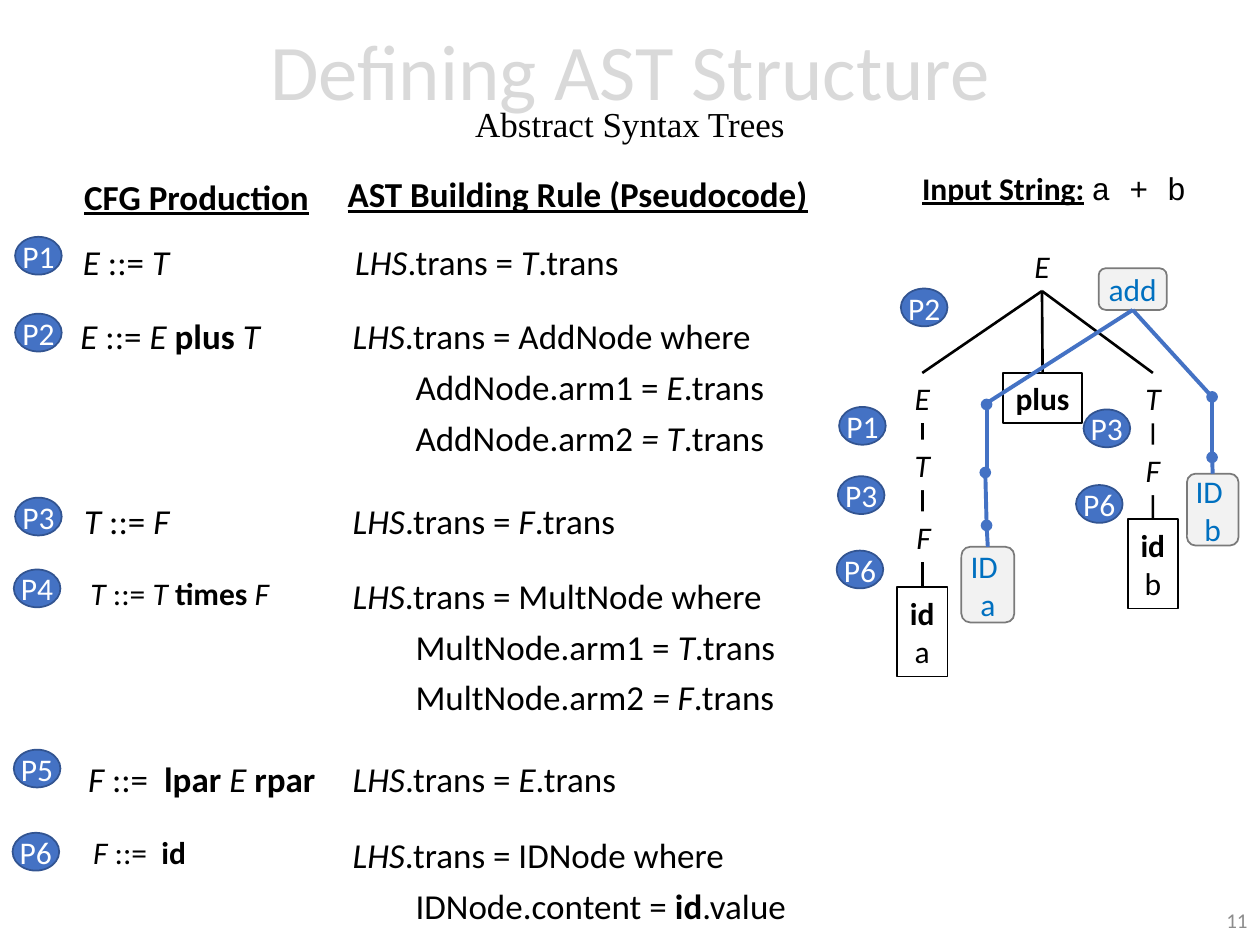
from lxml import etree
from pptx import Presentation
from pptx.dml.color import RGBColor
from pptx.enum import shapes, text
from pptx.oxml.ns import qn
from pptx.util import Inches, Pt

COLORS = {"black": "000000", "white": "FFFFFF", "blue": "4472C4", "navy": "325491",
          "sky": "0070C0", "pale": "F2F2F2", "gray": "7A7A7A", "title": "D9D9D9",
          "number": "8C8C8C"}
SHAPE = shapes.MSO_SHAPE
# preset, fill, outline, text colour, inset, wrap
LOOKS = {"plain": (SHAPE.RECTANGLE, "white", None, "black", 0.05, False),
         "framed": (SHAPE.RECTANGLE, "white", "black", "black", 0.05, False),
         "ast": (SHAPE.ROUNDED_RECTANGLE, "pale", "gray", "sky", 0, True),
         "badge": (SHAPE.OVAL, "blue", "navy", "white", 0, True)}
TOP, BOTTOM = 0, 2


def color(name):
    return RGBColor.from_string(COLORS[name])


class Slide:
    """Holds the current page and draws each kind of element on it."""

    def __init__(self, page):
        self.page = page

    def span(self, para, words, tint="black", **formats):
        span = para.add_run()
        span.text = words
        for key, value in {"name": "Calibri", "size": Pt(18), **formats}.items():
            setattr(span.font, key, value)
        span.font.color.rgb = color(tint)

    def fill_text(self, frame, lines, tint="black", size=18, spacing=None, align="LEFT",
                  underline=False):
        """~ toggles italic, * toggles bold, a leading > indents the line."""
        for index, line in enumerate(lines):
            para = frame.add_paragraph() if index else frame.paragraphs[0]
            para.alignment = getattr(text.PP_ALIGN, align)
            if spacing:
                para.line_spacing = Pt(spacing)
            if line.startswith(">"):
                para._p.get_or_add_pPr().set("marL", str(Inches(0.5)))
                line = line[1:]
            for i, part in enumerate(line.split("~")):
                for j, words in enumerate(part.split("*")):
                    if words:
                        self.span(para, words, tint, size=Pt(size), italic=i % 2 == 1,
                                  bold=j % 2 == 1, underline=underline and j % 2 == 1)

    def title(self, box, heading, subheading):
        holder = self.page.shapes.title
        for key, value in zip(("left", "top", "width", "height"), box):
            setattr(holder, key, Inches(value))
        frame = holder.text_frame
        frame.auto_size = text.MSO_AUTO_SIZE.NONE
        frame.vertical_anchor = text.MSO_ANCHOR.MIDDLE
        para = frame.paragraphs[0]
        para.alignment, para.line_spacing = text.PP_ALIGN.CENTER, 0.7
        self.span(para, heading, "title", size=Pt(45))
        para.add_line_break()
        self.span(para, subheading, name="Times New Roman", size=Pt(20))

    def label(self, box, *lines, **formats):
        frame = self.page.shapes.add_textbox(*map(Inches, box)).text_frame
        frame.word_wrap = True
        self.fill_text(frame, lines, **formats)
        return frame

    def node(self, look, box, *lines):
        preset, fill, outline, tint, inset, wrap = LOOKS[look]
        shape = self.page.shapes.add_shape(preset, *map(Inches, box))
        shape.shadow.inherit = False
        shape.fill.solid()
        shape.fill.fore_color.rgb = color(fill)
        if outline:
            shape.line.color.rgb = color(outline)
            shape.line.width = Pt(1)
        else:
            shape.line.fill.background()
        frame = shape.text_frame
        for side in ("left", "top", "right", "bottom"):
            setattr(frame, "margin_" + side, Inches(inset))
        frame.word_wrap = wrap
        frame.vertical_anchor = text.MSO_ANCHOR.MIDDLE
        self.fill_text(frame, lines, tint, align="CENTER")
        return shape

    def edge(self, start, end, tint="black", width=1.5, dot=False):
        """Each end is an (x, y) point or a (shape, side) pair."""
        points = [(0, 0) if hasattr(place[0], "shape_id") else place
                  for place in (start, end)]
        line = self.page.shapes.add_connector(
            shapes.MSO_CONNECTOR.STRAIGHT, *(Inches(v) for point in points for v in point))
        for place, join in ((start, line.begin_connect), (end, line.end_connect)):
            if hasattr(place[0], "shape_id"):
                join(*place)
        line.line.color.rgb = color(tint)
        line.line.width = Pt(width)
        if dot:
            etree.SubElement(line.line._get_or_add_ln(), qn("a:tailEnd"), type="oval")
        etree.SubElement(line._element.spPr, qn("a:effectLst"))

    def ast_edge(self, start, end, dot=True):
        self.edge(start, end, "blue", 2.25, dot)


def draw_parse_tree(slide):
    small = (0.32, 0.4)
    root = slide.node("plain", (8.11, 1.91, *small), "~E~")
    left = slide.node("plain", (7.16, 2.96, *small), "~E~")
    right = slide.node("plain", (8.99, 2.96, *small), "~T~")
    plus = slide.node("framed", (7.96, 2.96, 0.63, 0.4), "*plus*")
    leaf_a = slide.node("framed", (7.12, 4.66, 0.4, 0.71), "*id*", "a")
    leaf_b = slide.node("framed", (8.95, 4.12, 0.4, 0.71), "*id*", "b")
    for child in (left, right, plus):
        slide.edge((root, BOTTOM), (child, TOP))
    slide.edge((left, BOTTOM), (leaf_a, TOP))
    slide.edge((right, BOTTOM), (leaf_b, TOP))
    # Inner nodes sit over the long edges
    for x, y, name in ((7.16, 3.49, "T"), (7.17, 4.06, "F"), (8.99, 3.53, "F")):
        slide.node("plain", (x, y, *small), f"~{name}~")


def draw_ast(slide):
    add = slide.node("ast", (8.72, 2.13, 0.54, 0.33), "add")
    id_a = slide.node("ast", (7.63, 4.34, 0.42, 0.6), "ID ", "a")
    id_b = slide.node("ast", (9.42, 3.76, 0.41, 0.57), "ID ", "b")
    slide.ast_edge((9.62, 3.15), (add, BOTTOM), dot=False)
    slide.ast_edge((7.83, 3.2), (add, BOTTOM), dot=False)
    slide.ast_edge((id_a, TOP), (7.83, 4.17))
    slide.ast_edge((7.83, 4.15), (7.82, 3.75))
    slide.ast_edge((7.83, 3.72), (7.83, 3.21))
    slide.ast_edge((id_b, TOP), (9.62, 3.63))
    slide.ast_edge((9.62, 3.63), (9.62, 3.15))


def main():
    deck = Presentation()
    deck.slide_width, deck.slide_height = Inches(10), Inches(7.5)
    slide = Slide(deck.slides.add_slide(deck.slide_layouts[5]))

    # Title, slide number and column headings
    slide.title((0.69, 0.03, 8.62, 1.45), "Defining AST Structure", "Abstract Syntax Trees")
    number = slide.label((7.67, 7.1, 2.33, 0.4), "11", tint="number", size=12, align="RIGHT")
    number.vertical_anchor = text.MSO_ANCHOR.MIDDLE
    heading = {"size": 20, "spacing": 32, "underline": True}
    slide.label((0.57, 1.23, 2, 0.51), "*CFG Production*", **heading)
    slide.label((2.66, 1.21, 3.89, 0.51), "*AST Building Rule (Pseudocode)*", **heading)
    sample = slide.label((7.22, 1.29, 2.37, 0.4), "*Input String:* ", underline=True)
    slide.span(sample.paragraphs[0], "a + b", name="Courier New")

    # Productions
    for box, size, spacing, line in (
            ((0.56, 1.75, 2.22, 0.51), 20, 32, "~E~ ::= ~T~"),
            ((0.54, 2.38, 1.84, 0.48), 20, 29, "~E~ ::= ~E~ *plus* ~T~"),
            ((0.57, 3.8, 2.22, 0.51), 20, 32, "~T~ ::= ~F~"),
            ((0.62, 4.51, 1.64, 0.4), 18, None, "~T~ ::= ~T~ *times* ~F~"),
            ((0.6, 5.85, 4.51, 0.52), 20, 32, "~F~ ::=  *lpar* ~E~ *rpar*"),
            ((0.64, 6.56, 0.95, 0.4), 18, None, "~F~ ::=  *id*")):
        slide.label(box, line, size=size, spacing=spacing)

    # Building rules
    for left, top, width, height, spacing, *lines in (
            (2.72, 1.75, 2.31, 0.51, 32, "~T~.trans"),
            (2.7, 2.38, 3.53, 1.29, 29, "AddNode where",
             ">AddNode.arm1 = ~E~.trans", ">AddNode.arm2~ = T~.trans"),
            (2.7, 3.8, 2.61, 0.51, 32, "~F~.trans"),
            (2.7, 4.44, 3.56, 1.29, 29, "MultNode where",
             ">MultNode.arm1 = ~T~.trans", ">MultNode.arm2~ = F~.trans"),
            (2.7, 5.85, 2.58, 0.51, 32, "~E~.trans"),
            (2.7, 6.5, 3.7, 0.89, 29, "IDNode where", ">IDNode.content = *id*.value")):
        slide.label((left, top, width, height), "~LHS~.trans = " + lines[0], *lines[1:],
                    size=20, spacing=spacing)

    draw_parse_tree(slide)
    draw_ast(slide)

    # Production badges beside the rules and the tree
    for number, x, y in (
            (1, 0.12, 1.88), (2, 0.12, 2.49), (3, 0.12, 3.95), (4, 0.11, 4.52),
            (5, 0.11, 5.95), (6, 0.1, 6.61), (6, 6.64, 4.37), (3, 6.65, 3.78),
            (1, 6.66, 3.23), (6, 8.54, 3.85), (3, 8.6, 3.25), (2, 7.15, 2.29)):
        slide.node("badge", (x, y, 0.37, 0.3), f"P{number}")

    deck.save("out.pptx")


if __name__ == "__main__":
    main()
